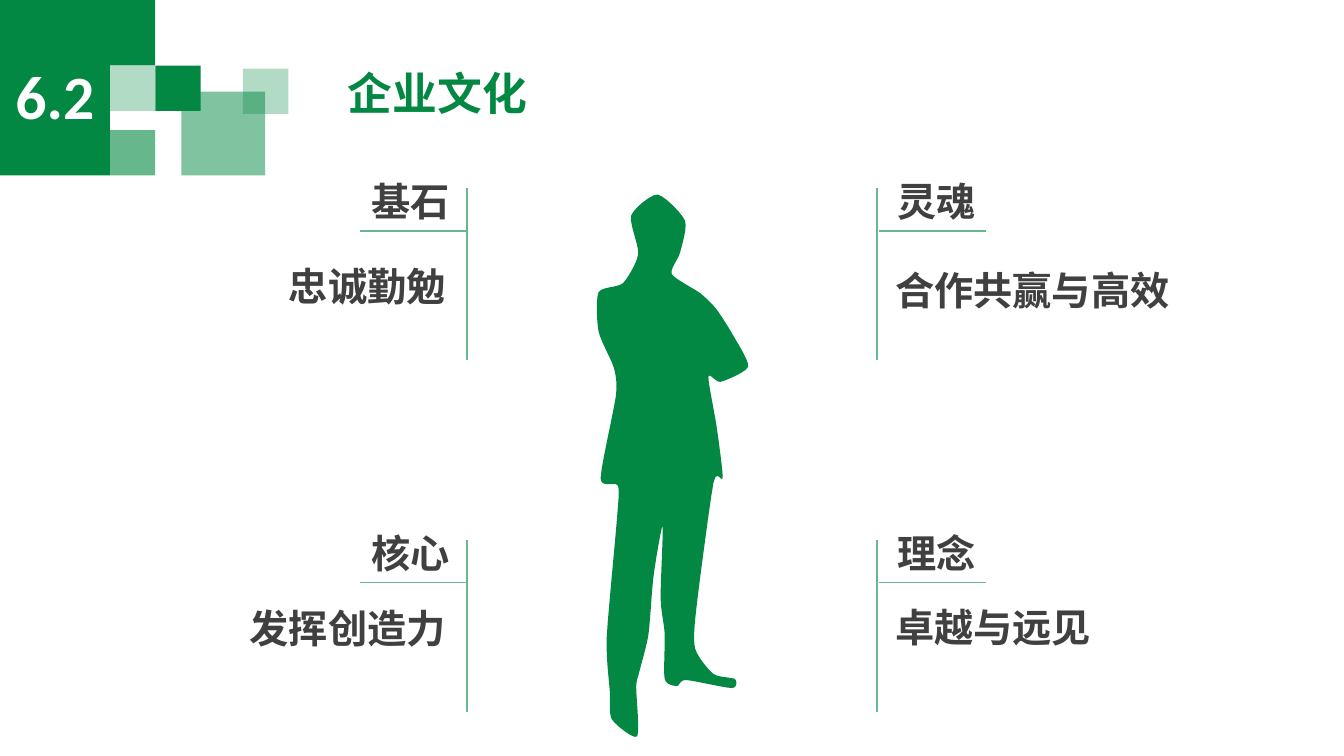
import collections
import dataclasses

import pptx
import pptx.dml.color
import pptx.enum.shapes
import pptx.enum.text
import pptx.oxml.ns
import pptx.util
from lxml import etree

Inches = pptx.util.Inches
Align = pptx.enum.text.PP_ALIGN
Anchor = pptx.enum.text.MSO_ANCHOR
qn = pptx.oxml.ns.qn
Box = collections.namedtuple("Box", "left top width height")


@dataclasses.dataclass(frozen=True)
class Theme:
    green: str = "028842"
    rule: str = "67B88E"
    ink: str = "404040"
    white: str = "FFFFFF"
    number_font: str = "Calibri"
    text_font: str = "Arial"
    chinese_font: str = "Noto Sans CJK SC"
    number_size: int = 44
    title_size: int = 32
    value_size: int = 28
    rule_width: int = 1


THEME = Theme()

SMALL_SQUARES = [
    (1.09, 0.65, 30),
    (1.54, 0.65, 100),
    (1.09, 1.29, 60),
    (2.41, 0.68, 30),
]

VALUES = [
    ("基石", "忠诚勤勉", True, 1.87, 0.73),
    ("核心", "发挥创造力", True, 5.36, 0.64),
    ("灵魂", "合作共赢与高效", False, 1.87, 0.77),
    ("理念", "卓越与远见", False, 5.36, 0.63),
]

BODY_OUTLINE = [
    (653, 193), (680, 219), (675, 251), (667, 272), (695, 291), (711, 307),
    (728, 334), (742, 364), (715, 379), (703, 374), (711, 423), (717, 474),
    (708, 479), (691, 605), (690, 644), (708, 669), (729, 674), (726, 683),
    (681, 675), (672, 681), (660, 674), (660, 629), (656, 594), (658, 522),
    (649, 572), (644, 630), (635, 667), (632, 682), (633, 731), (608, 714),
    (606, 686), (603, 633), (613, 516), (614, 482), (597, 475), (612, 393),
    (610, 365), (595, 329), (595, 290), (619, 281), (634, 252), (627, 214),
]


def rgb(color):
    return pptx.dml.color.RGBColor.from_string(color)


def write_text(frame, text, *, size, color, font, align=Align.LEFT,
               anchor=Anchor.TOP, margin=None, line_spacing=None):
    frame.word_wrap = True
    frame.auto_size = pptx.enum.text.MSO_AUTO_SIZE.NONE
    frame.vertical_anchor = anchor
    if margin is not None:
        frame.margin_left = frame.margin_right = Inches(margin)
        frame.margin_top = frame.margin_bottom = Inches(margin)
    paragraph = frame.paragraphs[0]
    paragraph.alignment = align
    if line_spacing:
        paragraph.line_spacing = line_spacing
    run = paragraph.add_run()
    run.text = text
    run.font.size = pptx.util.Pt(size)
    run.font.bold = True
    run.font.name = font
    run.font.color.rgb = rgb(color)
    east_asian = etree.SubElement(run.font._element, qn("a:ea"))
    east_asian.set("typeface", THEME.chinese_font)


def paint(shape, color, opacity=100):
    shape.shadow.inherit = False
    shape.line.fill.background()
    shape.fill.solid()
    shape.fill.fore_color.rgb = rgb(color)
    if opacity < 100:
        tint = shape._element.spPr.find(".//" + qn("a:srgbClr"))
        etree.SubElement(tint, qn("a:alpha")).set("val", str(opacity * 1000))


def add_block(slide, box, opacity=100):
    block = slide.shapes.add_shape(
        pptx.enum.shapes.MSO_SHAPE.RECTANGLE, *map(Inches, box))
    paint(block, THEME.green, opacity)
    return block


def add_rule(slide, *ends):
    rule = slide.shapes.add_connector(
        pptx.enum.shapes.MSO_CONNECTOR.STRAIGHT, *map(Inches, ends))
    rule.line.color.rgb = rgb(THEME.rule)
    rule.line.width = pptx.util.Pt(THEME.rule_width)
    etree.SubElement(rule._element.spPr, qn("a:effectLst"))


def add_label(slide, text, box, align):
    label = slide.shapes.add_textbox(*map(Inches, box))
    write_text(label.text_frame, text, size=THEME.value_size, color=THEME.ink,
               font=THEME.text_font, align=align, margin=0)


def add_header(slide, box):
    add_block(slide, Box(box.left, box.top + 0.65, 1.09, 1.09))
    add_block(slide, Box(box.left, box.top, 1.54, 0.65))
    add_block(slide, Box(box.left + 1.8, box.top + 0.91, 0.83, 0.83), 50)
    for left, top, opacity in SMALL_SQUARES:
        add_block(slide, Box(box.left + left, box.top + top, 0.45, 0.45), opacity)
    number = add_block(slide, Box(box.left, box.top + 0.4, 1.09, 1.09))
    write_text(number.text_frame, "6.2", size=THEME.number_size, color=THEME.white,
               font=THEME.number_font, align=Align.CENTER, anchor=Anchor.MIDDLE)
    title = slide.shapes.title
    title.left, title.top = Inches(box.left + 3.35), Inches(box.top + 0.65)
    title.width, title.height = Inches(box.width - 3.35), Inches(0.6)
    write_text(title.text_frame, "企业文化", size=THEME.title_size, color=THEME.green,
               font=THEME.chinese_font, anchor=Anchor.MIDDLE, line_spacing=0.9)


def smooth_outline(corners, steps=6, tension=0.35):
    count = len(corners)
    for index in range(count):
        before, start, end, after = (corners[(index + k) % count] for k in (-1, 0, 1, 2))
        for step in range(steps):
            t = step / steps
            blend = t * t * (3 - 2 * t)
            leave = tension * t * (1 - t) ** 2
            arrive = tension * t * t * (t - 1)
            yield tuple(s + blend * (e - s) + leave * (e - b) + arrive * (a - s)
                        for b, s, e, a in zip(before, start, end, after))


def add_businessman(slide, box):
    outline = list(smooth_outline(BODY_OUTLINE))
    xs, ys = zip(*outline)
    x_scale = box.width / (max(xs) - min(xs))
    y_scale = box.height / (max(ys) - min(ys))
    points = [(Inches(box.left + (x - min(xs)) * x_scale),
               Inches(box.top + (y - min(ys)) * y_scale)) for x, y in outline]
    builder = slide.shapes.build_freeform(*points[0])
    builder.add_line_segments(points[1:], close=True)
    paint(builder.convert_to_shape(), THEME.green)


def add_value(slide, box, heading, statement, on_left, statement_drop):
    spine = box.left + box.width if on_left else box.left
    rule_start = spine - 1.06 if on_left else spine + 0.02
    heading_left = spine - 0.98 if on_left else spine + 0.17
    statement_left = box.left if on_left else spine + 0.18
    statement_width = box.width - (0.21 if on_left else 0.18)
    rule_y = box.top + 0.42
    add_rule(slide, spine, box.top, spine, box.top + box.height)
    add_rule(slide, rule_start, rule_y, rule_start + 1.06, rule_y)
    add_label(slide, heading, Box(heading_left, box.top - 0.11, 0.84, 0.47), Align.CENTER)
    add_label(slide, statement,
              Box(statement_left, box.top + statement_drop, statement_width, 0.47),
              Align.RIGHT if on_left else Align.LEFT)


def main():
    deck = pptx.Presentation()
    deck.slide_width, deck.slide_height = Inches(13.33), Inches(7.5)
    slide = deck.slides.add_slide(deck.slide_layouts[5])
    add_header(slide, Box(0, 0, 7.14, 1.74))
    add_businessman(slide, Box(5.92, 1.93, 1.5, 5.38))
    for heading, statement, on_left, top, statement_drop in VALUES:
        box = Box(1.86, top, 2.77, 1.7) if on_left else Box(8.7, top, 3.14, 1.7)
        add_value(slide, box, heading, statement, on_left, statement_drop)
    deck.save("out.pptx")


if __name__ == "__main__":
    main()
